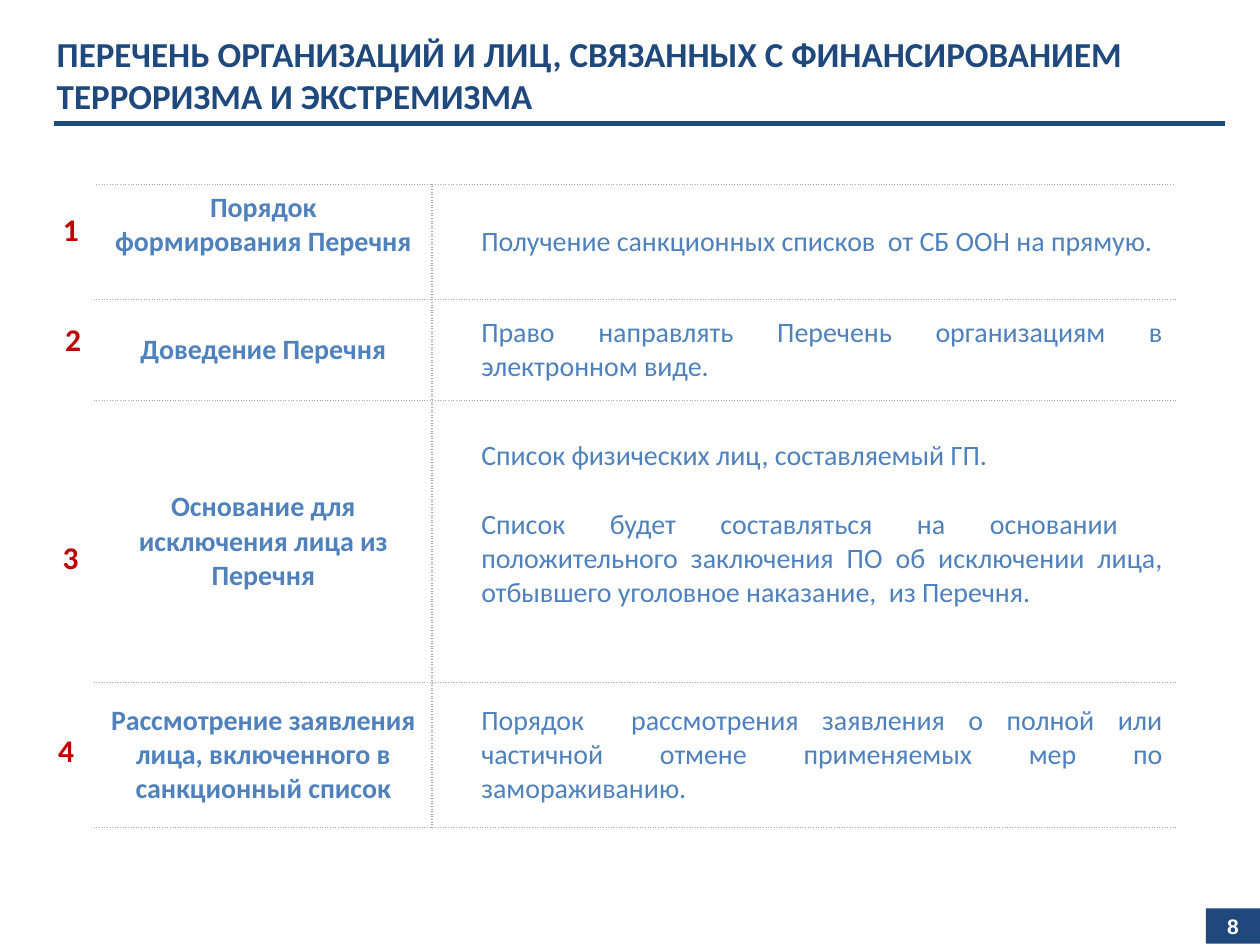
from dataclasses import dataclass
from typing import NamedTuple

from lxml.etree import SubElement
from pptx import Presentation
from pptx.dml.color import RGBColor
from pptx.enum.shapes import MSO_CONNECTOR, MSO_SHAPE
from pptx.enum.text import MSO_ANCHOR, MSO_AUTO_SIZE, PP_ALIGN
from pptx.oxml import parse_xml
from pptx.oxml.ns import nsdecls, qn
from pptx.util import Inches, Length, Pt


@dataclass(frozen=True)
class Theme:
    navy: str = "1F497D"
    blue: str = "4F81BD"
    red: str = "C00000"
    white: str = "FFFFFF"
    border: str = "A6A6A6"
    text_font: str = "Calibri"
    page_font: str = "Arial"
    title_size: int = 20
    number_size: int = 18
    table_size: int = 16
    page_size: int = 12
    rule_width: int = 3
    border_width: int = 1


class Box(NamedTuple):
    column: float
    row: float
    columns: float
    rows: float


@dataclass(frozen=True)
class Entry:
    number: str
    number_column: float
    number_row: float
    rows: float
    topic: str
    detail: str
    topic_lift: float = 0
    detail_lift: float = 0


THEME = Theme()
SLIDE_WIDTH = Inches(10)
SLIDE_HEIGHT = Inches(7.5)
GRID_COLUMNS = 100
GRID_ROWS = 75
TITLE_BOX = Box(3.5, 2.1, 93.7, 7.7)
TABLE_COLUMN, TABLE_ROW = 7.5, 14.65
TABLE_COLUMNS = (26.8, 59)
CELL_MARGIN = 1
CELL_PADDING = 0.5
DETAIL_INDENT = 3.9
LINE_ROWS = 2.7
PARAGRAPH_GAP = 19.5

ENTRIES = (
    Entry("1", 3.98, 16.2, 9, "Порядок\nформирования Перечня",
          "Получение санкционных списков  от СБ ООН на прямую.",
          topic_lift=LINE_ROWS),
    Entry("2", 4.15, 24.9, 8, "Доведение Перечня",
          "Право направлять Перечень организациям в электронном виде."),
    Entry("3", 3.95, 42.2, 22.4, "Основание для исключения лица из Перечня",
          "Список физических лиц, составляемый ГП.\n"
          "Список будет составляться на основании  положительного заключения ПО "
          "об исключении лица, отбывшего уголовное наказание,  из Перечня.",
          detail_lift=LINE_ROWS),
    Entry("4", 3.6, 57.5, 11.5,
          "Рассмотрение заявления лица, включенного в санкционный список",
          "Порядок  рассмотрения заявления о полной или частичной отмене "
          "применяемых мер по замораживанию."),
)


def across(columns: float) -> Length:
    return Length(round(SLIDE_WIDTH * columns / GRID_COLUMNS))


def down(rows: float) -> Length:
    return Length(round(SLIDE_HEIGHT * rows / GRID_ROWS))


def place(box: Box) -> tuple:
    return across(box.column), down(box.row), across(box.columns), down(box.rows)


def write(frame, text: str, *, size: int, color: str, font: str = THEME.text_font,
          bold: bool = True, align=PP_ALIGN.CENTER, gap: float = 0) -> None:
    for index, line in enumerate(text.split("\n")):
        para = frame.add_paragraph() if index else frame.paragraphs[0]
        para.alignment = align
        para.space_before = Pt(gap if index else 0)
        span = para.add_run()
        span.text = line
        span.font.name = font
        span.font.size = Pt(size)
        span.font.bold = bold
        span.font.color.rgb = RGBColor.from_string(color)


def add_title(slide) -> None:
    title = slide.shapes.title
    title.left, title.top, title.width, title.height = place(TITLE_BOX)
    frame = title.text_frame
    frame.word_wrap = True
    frame.auto_size = MSO_AUTO_SIZE.NONE
    frame.vertical_anchor = MSO_ANCHOR.TOP
    write(frame, "ПЕРЕЧЕНЬ ОРГАНИЗАЦИЙ И ЛИЦ, СВЯЗАННЫХ С ФИНАНСИРОВАНИЕМ "
          "ТЕРРОРИЗМА И ЭКСТРЕМИЗМА", size=THEME.title_size,
          color=THEME.navy, align=PP_ALIGN.LEFT)
    rule = slide.shapes.add_connector(MSO_CONNECTOR.STRAIGHT, across(4.3), down(9.8),
                                      across(97.2), down(9.8))
    rule.line.color.rgb = RGBColor.from_string(THEME.navy)
    rule.line.width = Pt(THEME.rule_width)
    SubElement(rule._element.spPr, qn("a:effectLst"))


def add_borders(cell, sides: str) -> None:
    properties = cell._tc.get_or_add_tcPr()
    for position, side in enumerate(sides):
        properties.insert(position, parse_xml(
            f'<a:ln{side} {nsdecls("a")} w="{Pt(THEME.border_width)}">'
            f'<a:solidFill><a:srgbClr val="{THEME.border}"/></a:solidFill>'
            f'<a:prstDash val="sysDot"/></a:ln{side}>'))


def fill_cell(cell, text: str, *, sides: str, indent: float, lift: float,
              bold: bool, align) -> None:
    cell.fill.solid()
    cell.fill.fore_color.rgb = RGBColor.from_string(THEME.white)
    add_borders(cell, sides)
    cell.vertical_anchor = MSO_ANCHOR.MIDDLE
    cell.margin_left = across(indent)
    cell.margin_right = across(CELL_MARGIN)
    cell.margin_top = down(CELL_PADDING)
    cell.margin_bottom = down(CELL_PADDING + lift)
    write(cell.text_frame, text, size=THEME.table_size, color=THEME.blue, bold=bold,
          align=align, gap=0 if bold else PARAGRAPH_GAP)


def add_list_table(slide) -> None:
    area = Box(TABLE_COLUMN, TABLE_ROW, sum(TABLE_COLUMNS),
               sum(entry.rows for entry in ENTRIES))
    table = slide.shapes.add_table(len(ENTRIES), len(TABLE_COLUMNS), *place(area)).table
    table.first_row = False
    table.horz_banding = False
    for column, width in zip(table.columns, TABLE_COLUMNS):
        column.width = across(width)
    for index, entry in enumerate(ENTRIES):
        table.rows[index].height = down(entry.rows)
        fill_cell(table.cell(index, 0), entry.topic, sides="RTB", indent=CELL_MARGIN,
                  lift=entry.topic_lift, bold=True, align=PP_ALIGN.CENTER)
        fill_cell(table.cell(index, 1), entry.detail, sides="LTB", indent=DETAIL_INDENT,
                  lift=entry.detail_lift, bold=False, align=PP_ALIGN.JUSTIFY)


def add_number(slide, entry: Entry) -> None:
    box = slide.shapes.add_textbox(*place(Box(entry.number_column, entry.number_row, 3.3, 4)))
    frame = box.text_frame
    frame.word_wrap = True
    frame.margin_left = frame.margin_right = 0
    write(frame, entry.number, size=THEME.number_size, color=THEME.red)


def add_page_number(slide) -> None:
    badge = slide.shapes.add_shape(MSO_SHAPE.RECTANGLE, *place(Box(95.7, 72.1, 4.3, 2.8)))
    badge.shadow.inherit = False
    badge.fill.solid()
    badge.fill.fore_color.rgb = RGBColor.from_string(THEME.navy)
    badge.line.fill.background()
    badge.text_frame.vertical_anchor = MSO_ANCHOR.MIDDLE
    write(badge.text_frame, "8", size=THEME.page_size, color=THEME.white,
          font=THEME.page_font)


def main() -> None:
    deck = Presentation()
    deck.slide_width = SLIDE_WIDTH
    deck.slide_height = SLIDE_HEIGHT
    slide = deck.slides.add_slide(deck.slide_layouts[5])
    add_title(slide)
    add_list_table(slide)
    for entry in ENTRIES:
        add_number(slide, entry)
    add_page_number(slide)
    deck.save("out.pptx")


if __name__ == "__main__":
    main()
